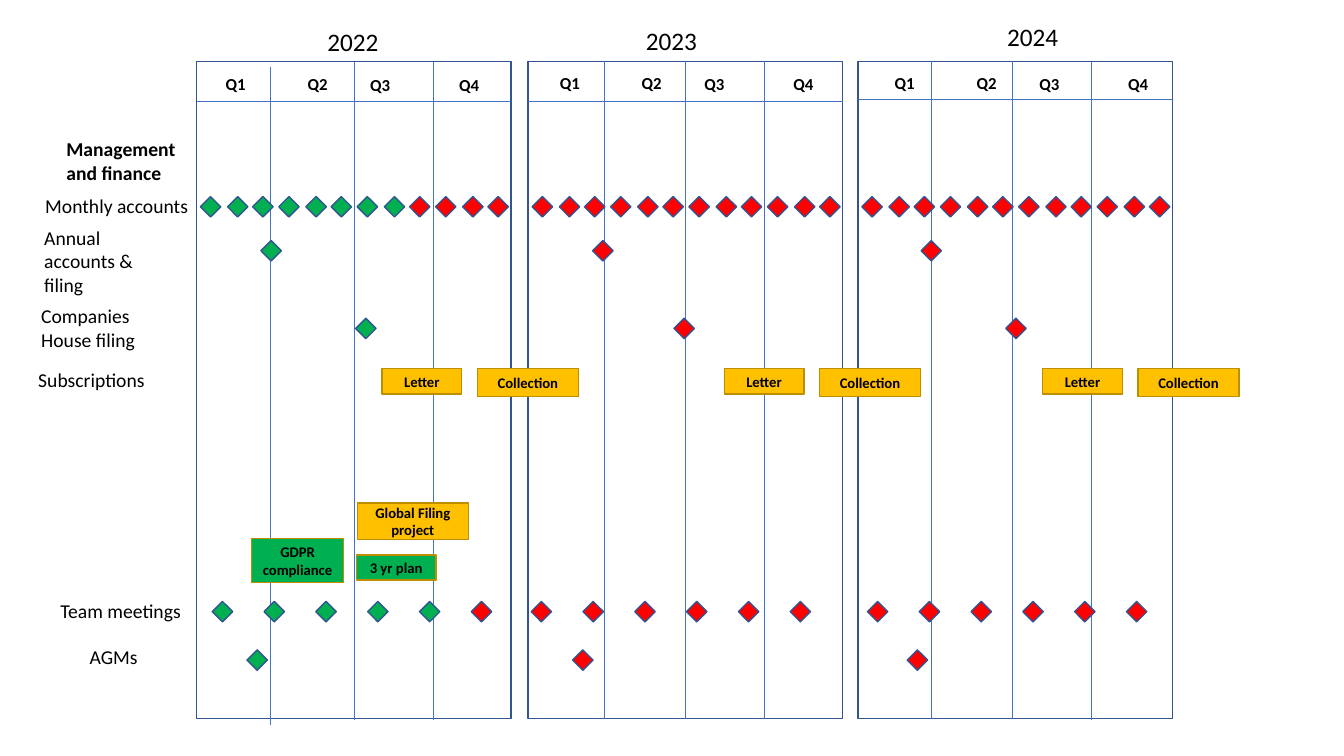
from dataclasses import dataclass

from lxml.etree import SubElement
from pptx import Presentation
from pptx.dml.color import RGBColor
from pptx.enum.shapes import MSO_CONNECTOR as Connector, MSO_SHAPE as Preset
from pptx.enum.text import MSO_ANCHOR as Anchor, MSO_AUTO_SIZE as AutoSize, PP_ALIGN as Align
from pptx.oxml.ns import qn
from pptx.util import Pt

COLOURS = {
    "text": "000000",
    "done": "00B050",
    "due": "FF0000",
    "planned": "FFC000",
    "outline": "325491",
    "divider": "4472C4",
    "box line": "BD8E00",
}
FORMATS = {
    "year": {"size": Pt(18), "bold": False},
    "quarter": {"size": Pt(12), "bold": True},
    "heading": {"size": Pt(14), "bold": True},
    "row": {"size": Pt(14), "bold": False},
    "box": {"size": Pt(10.5), "bold": True},
}
PANEL_TOP, PANEL_WIDTH, PANEL_HEIGHT = 43.9, 224.7, 469.4
DIAMOND_SIZE = 14.6
QUARTER_OFFSETS = (0, 58.5, 103.3, 166.8)
MONTH_OFFSETS = [quarter * 56 + month for quarter in range(4) for month in (0, 19.4, 37.4)]
MEETING_OFFSETS = [meeting * 37 for meeting in range(6)]
SINGLE = [0]


@dataclass
class Year:
    name: str
    left: float
    name_left: float
    name_top: float
    header_line: float
    dividers: list[tuple[float, float]]
    quarter_left: float
    quarter_top: float
    letter_left: float


@dataclass
class Label:
    text: str
    left: float
    top: float
    width: float
    height: float
    style: str = "row"
    wrap: bool = False


@dataclass
class Milestones:
    """Diamonds of one row: a start for each year, shared offsets, and how many are done."""
    top: float
    starts: tuple[float, float, float]
    offsets: list[float]
    done: int = 1


@dataclass
class Box:
    text: str
    left: float
    top: float
    width: float
    height: float
    fill: str = "planned"


YEARS = [
    Year("2022", 140.4, 226.8, 15.1, 72.2, [(193, 48.2), (253.4, 44.6), (309.6, 44.6)],
         154.1, 49, 272.9),
    Year("2023", 377.1, 454.3, 14.4, 72.2, [(431.5, 43.9), (489.4, 43.9), (546, 43.9)],
         392.8, 48.2, 517.3),
    Year("2024", 612.9, 712.3, 12, 71.1, [(665.3, 43.9), (723.4, 43.9), (779.6, 44.6)],
         632, 48.2, 744.8),
]
LABELS = [
    Label("Management and finance", 40.3, 94.3, 106.6, 41, "heading", True),
    Label("Monthly accounts", 25.2, 134.9, 117.4, 24.5),
    Label("Annual accounts & filing", 24.5, 157.7, 105.1, 58.3, wrap=True),
    Label("Companies House filing", 22.3, 213.8, 115.9, 41, wrap=True),
    Label("Subscriptions", 20.2, 259.2, 115.9, 24.5, wrap=True),
    Label("Team meetings", 36, 424.1, 101.5, 24.5),
    Label("AGMs", 56.9, 456.8, 49, 24.5),
]
MILESTONES = [
    Milestones(140.4, (143.1, 380.1, 615.6), MONTH_OFFSETS, 8),
    Milestones(171.8, (186.4, 423.3, 657.9), SINGLE),
    Milestones(227.3, (254, 481.4, 718.4), SINGLE),
    Milestones(429.6, (151.6, 379.4, 619.6), MEETING_OFFSETS, 5),
    Milestones(464.2, (176.4, 409, 648), SINGLE),
]
PROJECTS = [
    Box("GDPR compliance", 179.8, 384.8, 65.5, 31.3, "done"),
    Box("Global Filing project", 255.2, 359.3, 79.4, 26),
    Box("3 yr plan", 254.5, 396.3, 56.9, 18, "done"),
]


def colour(name: str) -> RGBColor:
    return RGBColor.from_string(COLOURS[name])


def write(frame, text: str, style: str):
    paragraph = frame.paragraphs[0]
    run = paragraph.add_run()
    run.text = text
    for name, value in ({"name": "Calibri"} | FORMATS[style]).items():
        setattr(run.font, name, value)
    run.font.color.rgb = colour("text")
    return paragraph


def add_label(slide, label: Label) -> None:
    lengths = map(Pt, (label.left, label.top, label.width, label.height))
    frame = slide.shapes.add_textbox(*lengths).text_frame
    frame.word_wrap = label.wrap
    frame.auto_size = AutoSize.SHAPE_TO_FIT_TEXT
    write(frame, label.text, label.style)


def add_preset(slide, preset: Preset, lengths: tuple, line: str, fill: str = ""):
    shape = slide.shapes.add_shape(preset, *map(Pt, lengths))
    shape.shadow.inherit = False
    shape.line.color.rgb = colour(line)
    shape.line.width = Pt(1)
    if fill:
        shape.fill.solid()
        shape.fill.fore_color.rgb = colour(fill)
    else:
        shape.fill.background()
    return shape


def add_line(slide, *ends: float) -> None:
    line = slide.shapes.add_connector(Connector.STRAIGHT, *map(Pt, ends))
    line.line.color.rgb = colour("divider")
    line.line.width = Pt(0.5)
    SubElement(line._element.spPr, qn("a:effectLst"))


def add_box(slide, box: Box) -> None:
    lengths = (box.left, box.top, box.width, box.height)
    frame = add_preset(slide, Preset.RECTANGLE, lengths, "box line", box.fill).text_frame
    frame.word_wrap = True
    frame.vertical_anchor = Anchor.MIDDLE
    write(frame, box.text, "box").alignment = Align.CENTER


def add_year(slide, year: Year) -> None:
    panel = (year.left, PANEL_TOP, PANEL_WIDTH, PANEL_HEIGHT)
    add_preset(slide, Preset.RECTANGLE, panel, "outline")
    add_label(slide, Label(year.name, year.name_left, year.name_top, 51.1, 29, "year"))
    for left, top in year.dividers:
        add_line(slide, left, top, left, top + PANEL_HEIGHT)
    add_line(slide, year.left, year.header_line, year.left + PANEL_WIDTH, year.header_line)
    for index, offset in enumerate(QUARTER_OFFSETS):
        top = year.quarter_top + index // 2 * 1.1
        add_label(slide, Label(f"Q{index + 1}", year.quarter_left + offset, top,
                               28.8, 21.8, "quarter"))


def add_milestones(slide, row: Milestones) -> None:
    lefts = [start + offset for start in row.starts for offset in row.offsets]
    for index, left in enumerate(lefts):
        fill = "done" if index < row.done else "due"
        lengths = (left, row.top, DIAMOND_SIZE, DIAMOND_SIZE)
        add_preset(slide, Preset.DIAMOND, lengths, "outline", fill)


def main() -> None:
    presentation = Presentation()
    presentation.slide_width, presentation.slide_height = Pt(960), Pt(540)
    slide = presentation.slides.add_slide(presentation.slide_layouts[6])
    for year in YEARS:
        add_year(slide, year)
    for label in LABELS:
        add_label(slide, label)
    for row in MILESTONES:
        add_milestones(slide, row)
    subscriptions = [
        box
        for year in YEARS
        for box in (Box("Letter", year.letter_left, 263.2, 56.9, 18.3),
                    Box("Collection", year.letter_left + 68, 263.2, 72.3, 20.2))
    ]
    for box in PROJECTS + subscriptions:
        add_box(slide, box)
    presentation.save("out.pptx")


if __name__ == "__main__":
    main()
